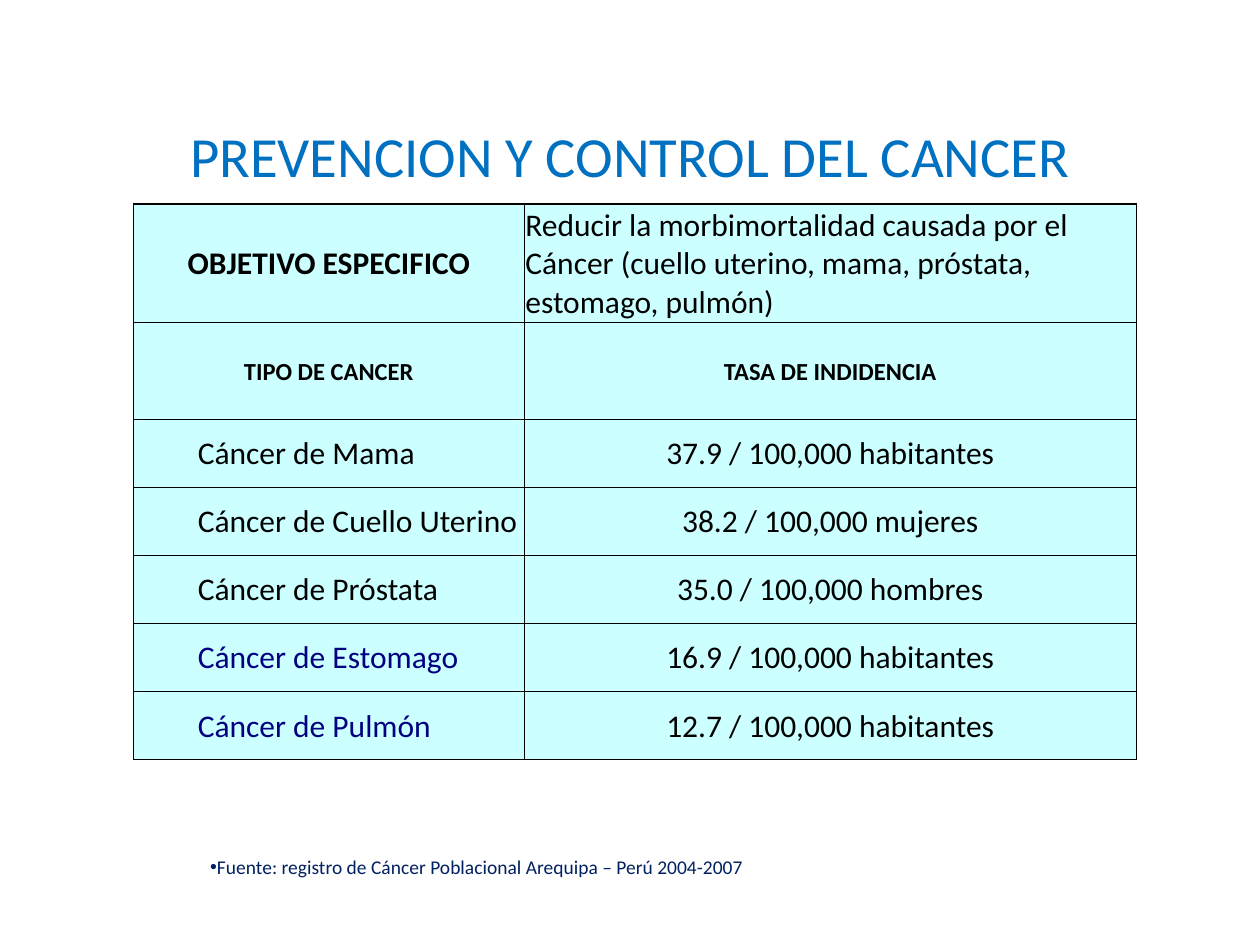
from lxml.etree import SubElement
from pptx import Presentation
from pptx.dml.color import RGBColor
from pptx.enum.text import MSO_ANCHOR as Anchor, PP_ALIGN as Align
from pptx.oxml.ns import qn
from pptx.util import Inches, Pt

COLUMNS, ROWS = 100, 75
BLACK, NAVY, BLUE, DARK_BLUE, CYAN = "000000", "000080", "0070C0", "002060", "CCFFFF"
THIN, THICK = 0.5, 1

RATES = [
    ("Cáncer de Mama", "37.9 / 100,000 habitantes", BLACK),
    ("Cáncer de Cuello Uterino", "38.2 / 100,000 mujeres", BLACK),
    ("Cáncer de Próstata", "35.0 / 100,000 hombres", BLACK),
    ("Cáncer de Estomago", "16.9 / 100,000 habitantes", NAVY),
    ("Cáncer de Pulmón", "12.7 / 100,000 habitantes", NAVY),
]


def rgb(color):
    return RGBColor.from_string(color)


def set_all(target, values):
    for name, value in values.items():
        setattr(target, name, value)


class SlideBuilder:
    """Holds the font, the grid and the slide being filled."""

    font = "Calibri"

    def __init__(self, presentation):
        self.column = presentation.slide_width / COLUMNS
        self.row = presentation.slide_height / ROWS
        self.slide = presentation.slides.add_slide(presentation.slide_layouts[5])

    def box(self, left, top, width, height):
        """Turn grid units into the position and size of a shape."""
        lengths = (left * self.column, top * self.row, width * self.column, height * self.row)
        return dict(zip(("left", "top", "width", "height"), map(round, lengths)))

    def add_text(self, frame, text, size, color=BLACK, bold=False, align=Align.LEFT, indent=0):
        """Fill the first paragraph and return its properties element."""
        paragraph = frame.paragraphs[0]
        paragraph.alignment = align
        run = paragraph.add_run()
        run.text = text
        set_all(run.font, {"name": self.font, "size": Pt(size), "bold": bold})
        run.font.color.rgb = rgb(color)
        properties = paragraph._p.get_or_add_pPr()
        if indent:
            properties.set("marL", str(round(indent * self.column)))
            properties.set("indent", "0")
        return properties

    def title(self, text, size, color, **place):
        shape = self.slide.shapes.title
        set_all(shape, self.box(**place))
        shape.text_frame.vertical_anchor = Anchor.BOTTOM
        self.add_text(shape.text_frame, text, size, color, align=Align.CENTER)

    def bullet(self, text, size, color, indent, **place):
        shape = self.slide.shapes.add_textbox(**self.box(**place))
        shape.text_frame.word_wrap = True
        properties = self.add_text(shape.text_frame, text, size, color, indent=indent)
        SubElement(properties, qn("a:buFont"), typeface="Arial")
        SubElement(properties, qn("a:buChar"), char="•")

    def border(self, cell, side, width):
        line = SubElement(cell._tc.get_or_add_tcPr(), qn(f"a:ln{side}"), w=str(Pt(width)))
        SubElement(SubElement(line, qn("a:solidFill")), qn("a:srgbClr"), val=BLACK)

    def cell(self, cell, widths, text, **style):
        margin = Inches(0.01)
        set_all(cell, {"margin_left": margin, "margin_right": margin, "margin_top": margin,
                       "margin_bottom": 0, "vertical_anchor": Anchor.MIDDLE})
        for side, width in widths.items():
            self.border(cell, side, width)
        cell.fill.solid()
        cell.fill.fore_color.rgb = rgb(CYAN)
        self.add_text(cell.text_frame, text, **style)

    def table(self, contents, left, top, widths, heights):
        place = self.box(left, top, sum(widths), sum(heights))
        table = self.slide.shapes.add_table(len(heights), len(widths), **place).table
        set_all(table, {"first_row": False, "horz_banding": False})
        for column, width in zip(table.columns, widths):
            column.width = round(width * self.column)
        for row, height in zip(table.rows, heights):
            row.height = round(height * self.row)
        last = len(heights) - 1
        for r, row in enumerate(contents):
            for c, (text, style) in enumerate(row):
                thick = {"L": c == 0, "R": r == 0 and c == 1, "T": r < 2,
                         "B": r == 0 or (r == last and c == 0)}
                borders = {side: THICK if heavy else THIN for side, heavy in thick.items()}
                self.cell(table.cell(r, c), borders, text, **style)


def main():
    presentation = Presentation()
    presentation.slide_width, presentation.slide_height = Inches(10), Inches(7.5)
    builder = SlideBuilder(presentation)

    builder.title("PREVENCION Y CONTROL DEL CANCER", 32.4, BLUE,
                  left=5, top=3, width=90, height=12.5)
    builder.bullet("Fuente: registro de Cáncer Poblacional Arequipa – Perú 2004-2007", 11.1,
                   DARK_BLUE, indent=10.7, left=5, top=67.4, width=90, height=3)

    centered = {"size": 18, "align": Align.CENTER}
    heading = {"size": 14, "align": Align.CENTER, "bold": True}
    contents = [
        [("OBJETIVO ESPECIFICO", {**centered, "bold": True}),
         ("Reducir la morbimortalidad causada por el Cáncer "
          "(cuello uterino, mama, próstata, estomago, pulmón)", {"size": 18})],
        [("TIPO DE CANCER", heading), ("TASA DE INDIDENCIA", heading)],
    ]
    contents += [[(kind, {"size": 18, "color": color, "indent": 5}), (rate, centered)]
                 for kind, rate, color in RATES]
    builder.table(contents, left=10.6, top=16.2, widths=[31, 48.6],
                  heights=[9.4, 7.7] + [5.4] * len(RATES))

    presentation.save("out.pptx")


if __name__ == "__main__":
    main()
